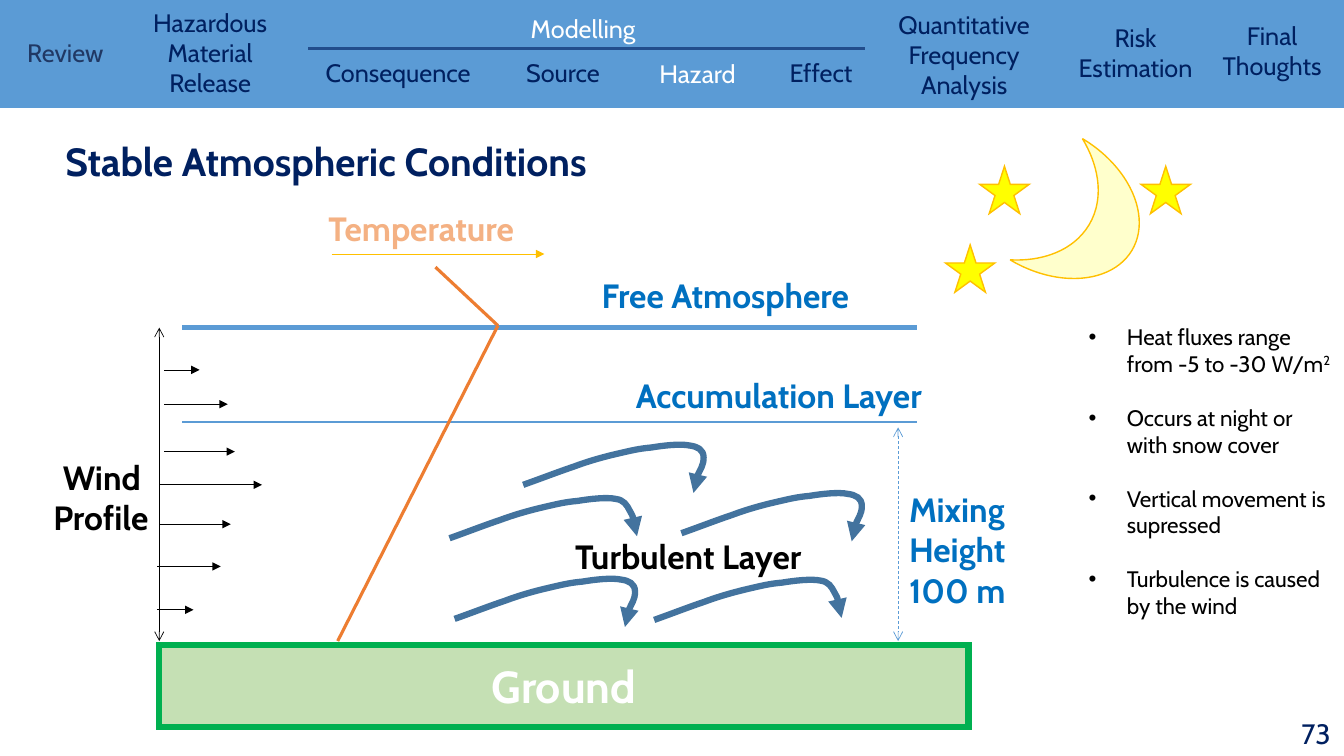
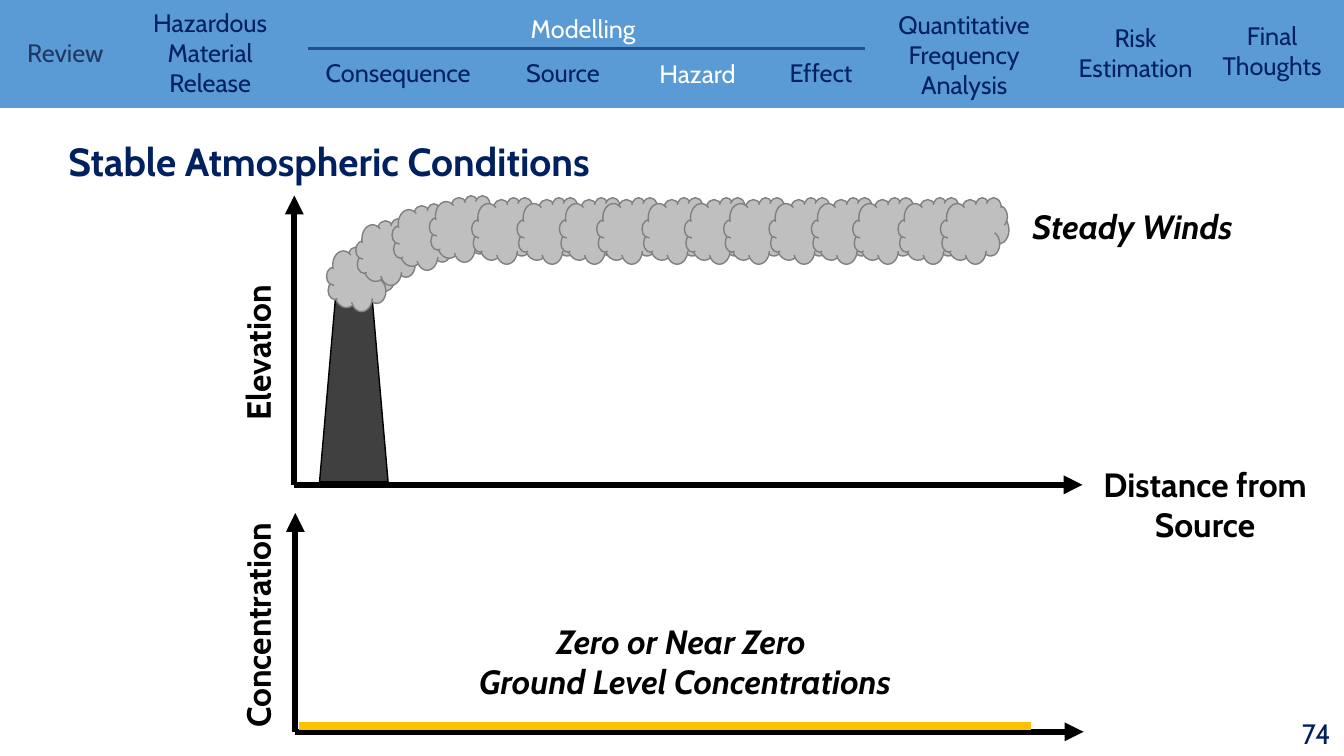
import lxml.etree
import pptx
import pptx.dml.color
import pptx.enum.dml
import pptx.enum.shapes
import pptx.enum.text
import pptx.oxml.ns
import pptx.util

Inches = pptx.util.Inches
SHAPES = pptx.enum.shapes.MSO_SHAPE
ALIGN = pptx.enum.text.PP_ALIGN
ANCHOR = pptx.enum.text.MSO_ANCHOR
DASH = pptx.enum.dml.MSO_LINE.DASH

SLIDE_WIDTH, SLIDE_HEIGHT = 40 / 3, 7.5
FONT = "Cabin"
NAVY, SLATE, SKY, BLUE = "002060", "203864", "5B9BD5", "0070C0"
RULE, EDDY, ORANGE, PEACH = "224D8C", "43739E", "ED7D31", "F4B183"
GOLD, YELLOW, CREAM = "FFC000", "FFFF00", "FFFFCC"
GREEN, LEAF = "00B050", "C5E0B4"
CHARCOAL, GREY, SILVER = "404040", "808080", "BFBFBF"
BLACK, WHITE = "000000", "FFFFFF"

NAVIGATION = [
    ("Review", (0.17, 0.32, 1.11, 0.4), SLATE, ALIGN.LEFT),
    ("Hazardous Material Release", (1.27, 0.02, 1.63, 1), NAVY, ALIGN.CENTER),
    ("Final Thoughts", (11.84, 0.15, 1.56, 0.74), NAVY, ALIGN.CENTER),
    ("Effect", (7.27, 0.52, 1.75, 0.39), NAVY, ALIGN.CENTER),
    ("Quantitative Frequency Analysis", (8.69, 0.04, 1.75, 0.96), NAVY, ALIGN.CENTER),
    ("Risk Estimation", (10.39, 0.17, 1.75, 0.69), NAVY, ALIGN.CENTER),
    ("Consequence", (3.06, 0.52, 1.78, 0.4), NAVY, ALIGN.CENTER),
    ("Hazard", (6.1, 0.53, 1.64, 0.38), WHITE, ALIGN.CENTER),
    ("Source", (4.59, 0.52, 1.99, 0.4), NAVY, ALIGN.CENTER),
    ("Modelling", (3.06, 0.08, 5.45, 0.4), WHITE, ALIGN.CENTER),
]

# Control points of cubic Bézier segments, relative to the start of an eddy
EDDY_RISE = [
    (0.17, -0.06), (0.35, -0.13), (0.5, -0.18),
    (0.66, -0.24), (0.81, -0.28), (0.94, -0.31),
    (1.07, -0.34), (1.15, -0.36), (1.27, -0.37),
    (1.39, -0.39), (1.56, -0.41), (1.65, -0.39),
]
HOOKED_EDDY = EDDY_RISE + [
    (1.73, -0.38), (1.79, -0.35), (1.79, -0.27),
    (1.79, -0.19), (1.67, -0.01), (1.69, 0.08),
]
OPEN_EDDY = EDDY_RISE + [
    (1.73, -0.38), (1.76, -0.33), (1.79, -0.27),
    (1.83, -0.2), (1.84, -0.11), (1.86, -0.02),
]


def rgb(color):
    return pptx.dml.color.RGBColor.from_string(color)


def add_element(parent, tag, **attributes):
    return lxml.etree.SubElement(parent, pptx.oxml.ns.qn(tag), **attributes)


def write(paragraph, text, size=24, color=BLACK, bold=False, italic=False,
          superscript=False):
    """Add one formatted run to a paragraph."""
    run = paragraph.add_run()
    run.text = text
    run.font.name = FONT
    run.font.size = pptx.util.Pt(size)
    run.font.bold = bold
    run.font.italic = italic
    run.font.color.rgb = rgb(color)
    if superscript:
        run._r.get_or_add_rPr().set("baseline", "30000")


def add_bullet(paragraph, indent):
    properties = paragraph._p.get_or_add_pPr()
    properties.set("marL", str(Inches(indent)))
    properties.set("indent", str(-Inches(indent)))
    add_element(properties, "a:buFont", typeface="Arial")
    add_element(properties, "a:buChar", char="•")


def add_arrowheads(line, head=None, tail=None):
    for tag, kind in (("a:headEnd", head), ("a:tailEnd", tail)):
        if kind:
            add_element(line._get_or_add_ln(), tag, type=kind)


def bend(shape):
    """Turn each three straight segments of a freeform into one Bézier curve."""
    outline = shape._element.find(".//" + pptx.oxml.ns.qn("a:path"))
    segments = outline.findall(pptx.oxml.ns.qn("a:lnTo"))
    for index, segment in enumerate(segments):
        if index % 3 == 0:
            curve = add_element(outline, "a:cubicBezTo")
        curve.append(segment[0])
        outline.remove(segment)


class Deck:
    """The presentation, its shared style and the current slide."""

    def __init__(self):
        self.presentation = pptx.Presentation()
        self.presentation.slide_width = Inches(SLIDE_WIDTH)
        self.presentation.slide_height = Inches(SLIDE_HEIGHT)
        self.slide = None

    def new_slide(self, title, number, title_left):
        self.slide = self.presentation.slides.add_slide(
            self.presentation.slide_layouts[6])
        self.shape(SHAPES.RECTANGLE, (0, 0, SLIDE_WIDTH, 1.07), SKY)
        for label, box, color, align in NAVIGATION:
            self.text(label, box, align=align, size=18, color=color)
        self.line((3.06, 0.48), (8.58, 0.48), RULE, 2.25)
        self.text(str(number), (10.19, 7.07, 3.11, 0.4), align=ALIGN.RIGHT,
                  anchor=ANCHOR.MIDDLE, size=20, color=NAVY)
        self.text(title, (title_left, 1.31, 12.75, 6.33), size=28, color=NAVY,
                  bold=True)

    def text(self, text, box, align=ALIGN.LEFT, anchor=ANCHOR.TOP, rotation=0,
             **style):
        """Add a text box with one paragraph for each line of text."""
        shape = self.slide.shapes.add_textbox(*map(Inches, box))
        shape.rotation = rotation
        frame = shape.text_frame
        frame.word_wrap = True
        frame.vertical_anchor = anchor
        for index, line in enumerate(text.split("\n")):
            paragraph = frame.add_paragraph() if index else frame.paragraphs[0]
            paragraph.alignment = align
            write(paragraph, line, **style)
        return shape

    def label(self, text, box, **style):
        self.text(text, box, bold=True, **style)

    def bullets(self, text, box, size, gap, indent):
        shape = self.text(text, box, size=size)
        shape.text_frame.margin_left = 0
        for index, paragraph in enumerate(shape.text_frame.paragraphs):
            if index:
                paragraph.space_before = pptx.util.Pt(gap)
            add_bullet(paragraph, indent)
        return shape.text_frame.paragraphs

    def shape(self, kind, box, fill, outline=None, width=1, rotation=0, flip=False):
        shape = self.slide.shapes.add_shape(kind, *map(Inches, box))
        shape.shadow.inherit = False
        shape.rotation = rotation
        shape.fill.solid()
        shape.fill.fore_color.rgb = rgb(fill)
        if outline:
            shape.line.color.rgb = rgb(outline)
            shape.line.width = pptx.util.Pt(width)
            add_element(shape.line._get_or_add_ln(), "a:miter", lim="800000")
        else:
            shape.line.fill.background()
        if flip:
            shape._element.spPr.get_or_add_xfrm().set("flipH", "1")
        return shape

    def line(self, start, end, color, width, dash=None, head=None, tail=None):
        connector = self.slide.shapes.add_connector(
            pptx.enum.shapes.MSO_CONNECTOR.STRAIGHT, *map(Inches, (*start, *end)))
        connector.line.color.rgb = rgb(color)
        connector.line.width = pptx.util.Pt(width)
        if dash:
            connector.line.dash_style = dash
        add_arrowheads(connector.line, head, tail)
        add_element(connector._element.spPr, "a:effectLst")

    def curved_arrow(self, left, top, controls, color, width):
        points = [(Inches(left + x), Inches(top + y)) for x, y in controls]
        builder = self.slide.shapes.build_freeform(Inches(left), Inches(top))
        builder.add_line_segments(points, close=False)
        shape = builder.convert_to_shape()
        bend(shape)
        shape.shadow.inherit = False
        shape.fill.background()
        shape.line.color.rgb = rgb(color)
        shape.line.width = pptx.util.Pt(width)
        add_arrowheads(shape.line, tail="triangle")

    def axes(self, left, bottom, top):
        corner = (left, bottom)
        for end in ((left, top), (left + 7.82, bottom)):
            self.line(corner, end, BLACK, 4.5, tail="triangle")


def build_atmosphere_slide(deck):
    deck.new_slide("Stable Atmospheric Conditions", 73, 0.55)

    ground = deck.shape(SHAPES.RECTANGLE, (1.58, 6.4, 8.03, 0.81), LEAF, GREEN, 4.5)
    ground.text_frame.vertical_anchor = ANCHOR.MIDDLE
    paragraph = ground.text_frame.paragraphs[0]
    paragraph.alignment = ALIGN.CENTER
    write(paragraph, "Ground", size=32, color=WHITE, bold=True)

    deck.line((1.81, 3.25), (9.1, 3.25), SKY, 3)
    deck.label("Free Atmosphere", (5.87, 2.68, 3.09, 0.5), color=BLUE)
    deck.shape(SHAPES.MOON, (10.31, 1.53, 0.99, 1.4), CREAM, GOLD,
               rotation=30.8, flip=True)
    for left, top in ((9.72, 1.65), (11.32, 1.65), (9.38, 2.43)):
        deck.shape(SHAPES.STAR_5_POINT, (left, top, 0.49, 0.47), YELLOW, GOLD)

    deck.line((8.91, 4.24), (8.91, 6.36), SKY, 0.5, DASH, head="arrow", tail="arrow")
    deck.line((1.81, 4.19), (9.1, 4.19), SKY, 1.5)
    deck.label("Accumulation Layer", (6.21, 3.67, 3.54, 0.5), color=BLUE)
    deck.label("Mixing\nHeight\n100 m", (8.92, 4.8, 1.43, 1.31), color=BLUE)

    deck.line((1.58, 3.25), (1.58, 6.36), BLACK, 0.5, head="arrow", tail="arrow")
    winds = [(1.58, 2.6, 4.81), (1.58, 2.29, 5.2), (1.56, 2.19, 5.62),
             (1.56, 1.92, 6.05), (1.63, 2.33, 4.48), (1.63, 2.26, 4.01),
             (1.63, 1.98, 3.67)]
    for left, right, height in winds:
        deck.line((left, height), (right, height), BLACK, 0.5, tail="triangle")
    deck.label("Wind \nProfile", (0.26, 4.48, 1.31, 0.91), align=ALIGN.RIGHT)

    for end in ((3.35, 6.36), (4.32, 2.65)):
        deck.line((4.94, 3.23), end, ORANGE, 2.25)
    deck.label("Temperature", (3.16, 2.01, 2.39, 0.5), color=PEACH)
    deck.line((3.29, 2.52), (5.4, 2.52), GOLD, 0.5, tail="triangle")

    eddies = [(6.76, 5.29, HOOKED_EDDY), (6.49, 6.15, OPEN_EDDY),
              (4.51, 6.14, HOOKED_EDDY), (5.19, 4.81, HOOKED_EDDY),
              (4.46, 5.34, OPEN_EDDY)]
    for left, top, controls in eddies:
        deck.curved_arrow(left, top, controls, EDDY, 4.5)
    deck.label("Turbulent Layer", (5.02, 5.27, 3.03, 0.5), align=ALIGN.RIGHT)

    facts = deck.bullets(
        "Heat fluxes range from -5 to -30 W/m\n"
        "Occurs at night or with snow cover\n"
        "Vertical movement is supressed\n"
        "Turbulence is caused by the wind",
        (10.8, 3.16, 2.51, 3.06), size=16, gap=19.2, indent=0.38)
    write(facts[0], "2", size=16, superscript=True)


def build_plume_slide(deck):
    deck.new_slide("Stable Atmospheric Conditions", 74, 0.58)

    deck.axes(2.92, 4.81, 1.94)
    deck.label("Distance from Source", (10.74, 4.55, 2.43, 0.91), align=ALIGN.CENTER)
    deck.label("Elevation", (1.34, 3.25, 2.43, 0.5), align=ALIGN.CENTER, rotation=270)

    deck.shape(SHAPES.TRAPEZOID, (3.17, 2.82, 0.68, 1.96), CHARCOAL, BLACK)
    rising = [(3.24, 2.43), (3.53, 2.17), (3.89, 2.02), (4.26, 1.94)]
    drifting = [(left, 1.96) for left in (4.68, 5.13, 5.55, 5.92, 6.37, 6.79, 7.18,
                                          7.63, 8.05, 8.46, 8.91, 9.33)]
    for left, top in rising + drifting:
        deck.shape(SHAPES.CLOUD, (left, top, 0.68, 0.66), SILVER, GREY)

    deck.axes(2.93, 7.26, 5.09)
    deck.label("Concentration", (1.46, 5.75, 2.6, 0.91), align=ALIGN.CENTER,
               rotation=270)
    deck.label("Steady Winds", (10.02, 1.99, 2.43, 0.91), align=ALIGN.CENTER,
               italic=True)
    deck.label("Zero or Near Zero \nGround Level Concentrations",
               (2.92, 6.11, 7.75, 0.91), align=ALIGN.CENTER, italic=True)
    deck.line((10.23, 7.2), (2.97, 7.2), GOLD, 6)


def main():
    deck = Deck()
    build_atmosphere_slide(deck)
    build_plume_slide(deck)
    deck.presentation.save("out.pptx")


if __name__ == "__main__":
    main()
